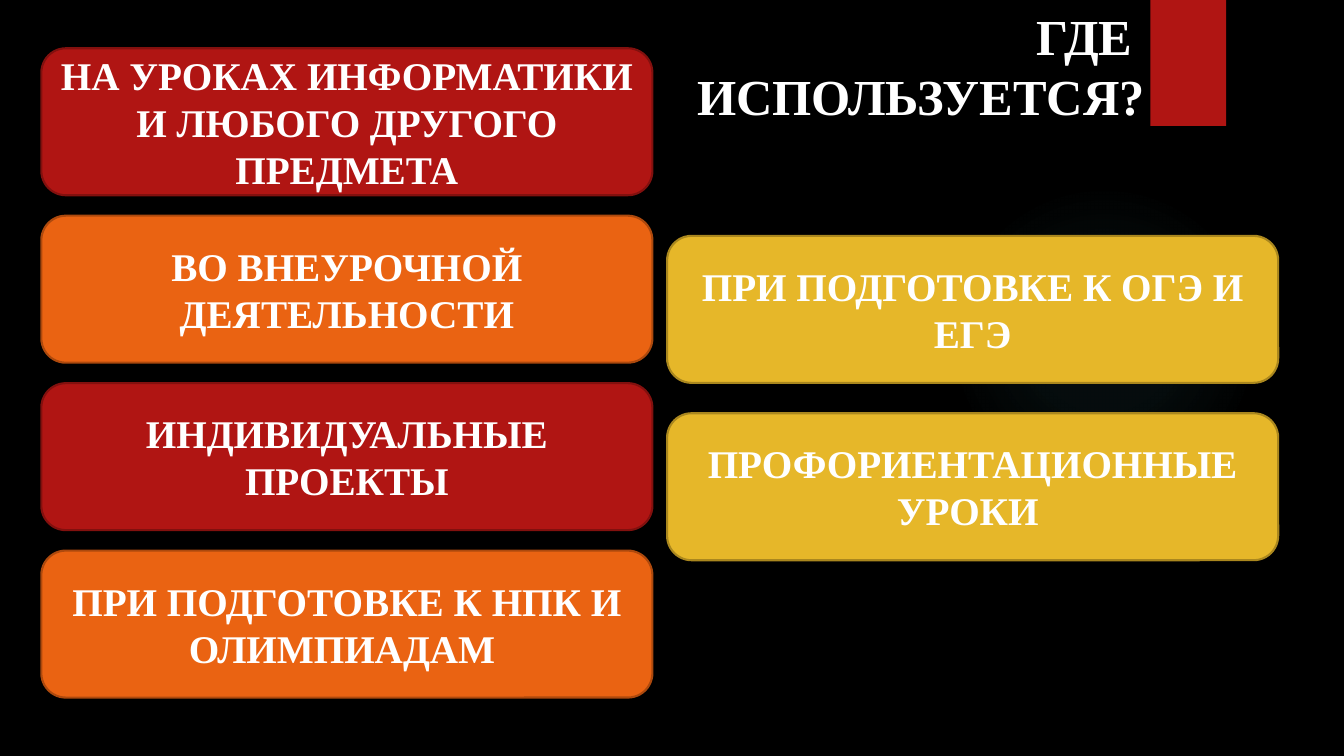
"""Build the slide on where the material is used."""
from lxml.etree import SubElement
from pptx import Presentation
from pptx.dml.color import RGBColor
from pptx.enum.shapes import MSO_SHAPE
from pptx.enum.text import MSO_ANCHOR, PP_ALIGN
from pptx.oxml.ns import qn
from pptx.util import Pt

WHITE = RGBColor(0xFF, 0xFF, 0xFF)
BLACK = RGBColor(0, 0, 0)
RED = RGBColor(0xB0, 0x15, 0x13)
ORANGE = RGBColor(0xEA, 0x63, 0x12)
GOLD = RGBColor(0xE6, 0xB7, 0x29)
TEAL = RGBColor(0x50, 0xB9, 0xC1)
EDGES = {
    RED: RGBColor(0x82, 0x10, 0x0E),
    ORANGE: RGBColor(0xAD, 0x49, 0x0D),
    GOLD: RGBColor(0xAA, 0x87, 0x1E),
}
TITLE = ["ГДЕ ", "ИСПОЛЬЗУЕТСЯ?"]
LEFT = [
    ("НА УРОКАХ ИНФОРМАТИКИ И ЛЮБОГО ДРУГОГО ПРЕДМЕТА", RED),
    ("ВО ВНЕУРОЧНОЙ ДЕЯТЕЛЬНОСТИ", ORANGE),
    ("ИНДИВИДУАЛЬНЫЕ ПРОЕКТЫ", RED),
    ("ПРИ ПОДГОТОВКЕ К НПК И ОЛИМПИАДАМ ", ORANGE),
]
RIGHT = [
    ("ПРИ ПОДГОТОВКЕ К ОГЭ И ЕГЭ", GOLD),
    ("ПРОФОРИЕНТАЦИОННЫЕ УРОКИ ", GOLD),
]
COLUMNS = [(29.5, 34.5, 119.6, LEFT), (476.5, 168.5, 126.7, RIGHT)]
CARD = (436.5, 105)
GLOW = [(0, 7), (36, 6), (69, 0), (100, 0)]


def write(frame, lines, size=28, align=PP_ALIGN.CENTER, wrap=True):
    frame.word_wrap = wrap
    for i, line in enumerate(lines):
        para = frame.add_paragraph() if i else frame.paragraphs[0]
        para.alignment = align
        run = para.add_run()
        run.text = line
        font = run.font
        font.name, font.size, font.bold = "Times New Roman", Pt(size), True
        font.color.rgb = WHITE


def draw(slide, kind, box, fill=None):
    shape = slide.shapes.add_shape(kind, *map(Pt, box))
    shape.shadow.inherit = False
    shape.line.fill.background()
    if fill is not None:
        shape.fill.solid()
        shape.fill.fore_color.rgb = fill
    return shape


def add_glow(slide):
    shape = draw(slide, MSO_SHAPE.OVAL, (677.5, 131.75, 221.75, 221.75))
    shape.fill.gradient()
    grad = shape._element.spPr.find(qn("a:gradFill"))
    for child in list(grad):
        grad.remove(child)
    stops = SubElement(grad, qn("a:gsLst"))
    for place, alpha in GLOW:
        stop = SubElement(stops, qn("a:gs"), pos=str(place * 1000))
        color = SubElement(stop, qn("a:srgbClr"), val=str(TEAL))
        SubElement(color, qn("a:alpha"), val=str(alpha * 1000))
    round_path = SubElement(grad, qn("a:path"), path="circle")
    SubElement(round_path, qn("a:fillToRect"), l="50000", t="50000", r="50000", b="50000")


def main():
    deck = Presentation()
    deck.slide_width, deck.slide_height = Pt(960), Pt(540)
    slide = deck.slides.add_slide(deck.slide_layouts[6])
    slide.background.fill.solid()
    slide.background.fill.fore_color.rgb = BLACK
    add_glow(slide)
    draw(slide, MSO_SHAPE.RECTANGLE, (821.75, 0, 54, 90), RED)
    title = slide.shapes.add_textbox(Pt(487.5), Pt(0), Pt(337.5), Pt(94.5))
    write(title.text_frame, TITLE, size=36, align=PP_ALIGN.RIGHT, wrap=False)
    for left, top, step, cards in COLUMNS:
        for i, (text, fill) in enumerate(cards):
            box = (left, top + i * step, *CARD)
            card = draw(slide, MSO_SHAPE.ROUNDED_RECTANGLE, box, fill)
            card.line.color.rgb = EDGES[fill]
            card.line.width = Pt(1.5)
            card.text_frame.vertical_anchor = MSO_ANCHOR.MIDDLE
            write(card.text_frame, [text])
    deck.save("out.pptx")


if __name__ == "__main__":
    main()
